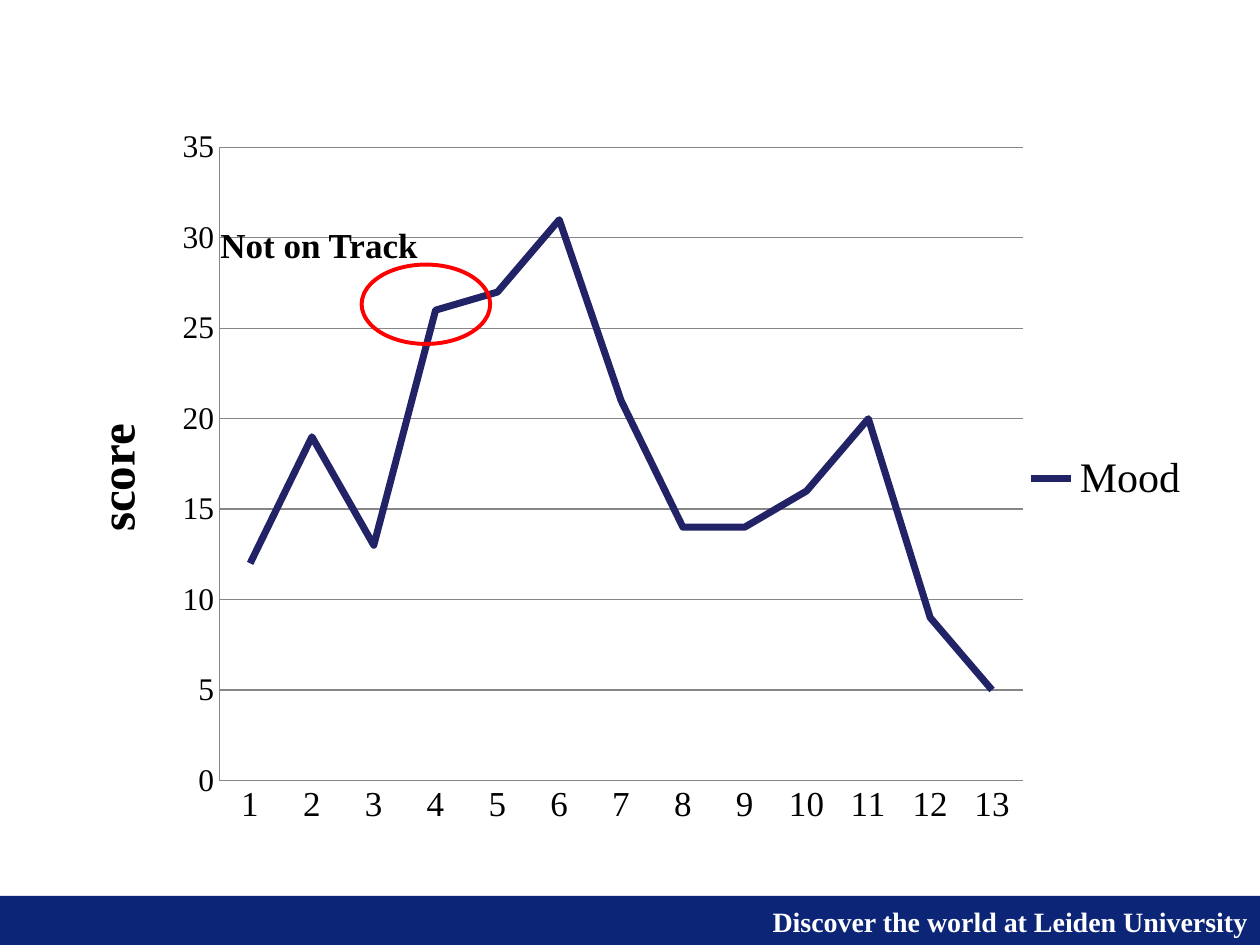
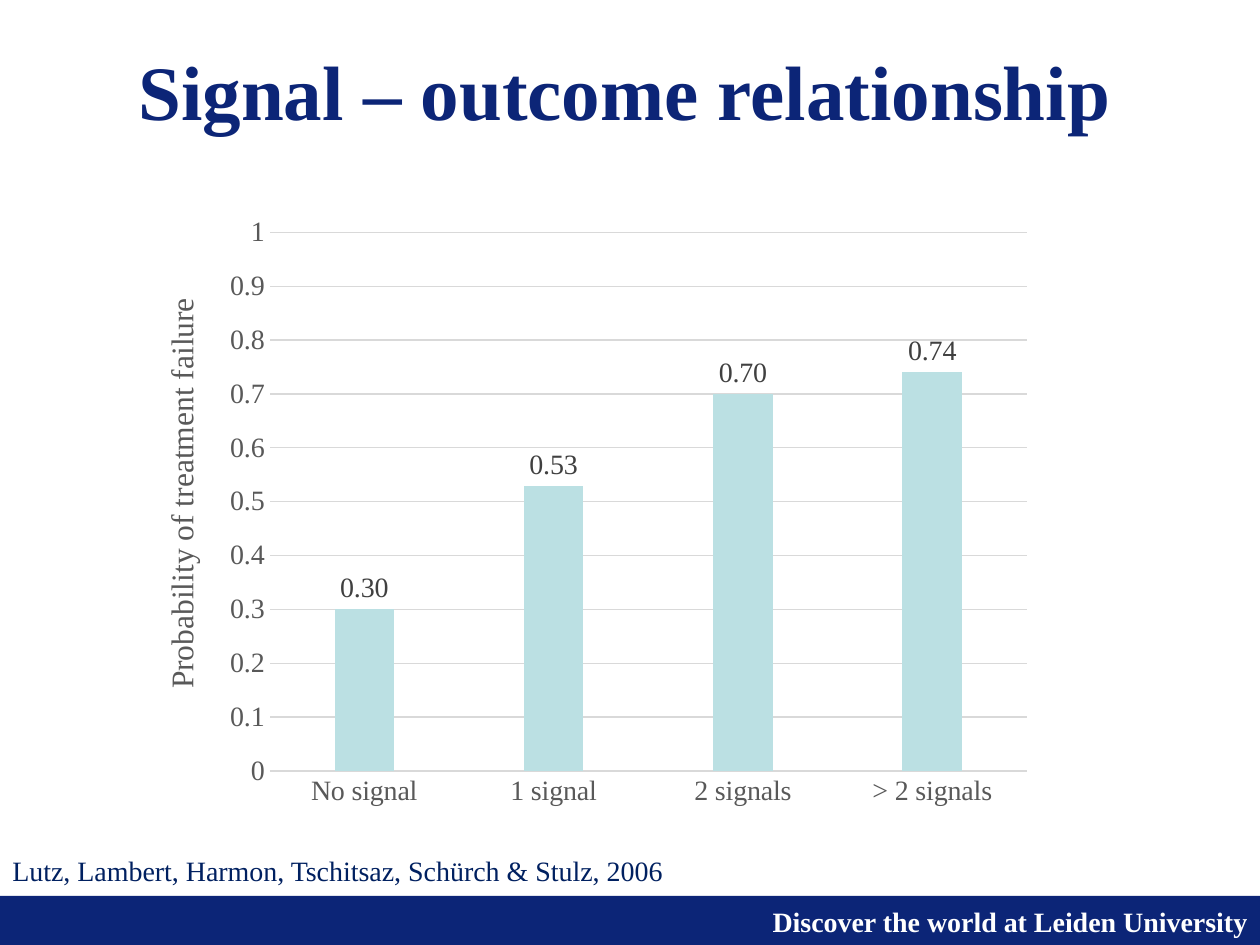
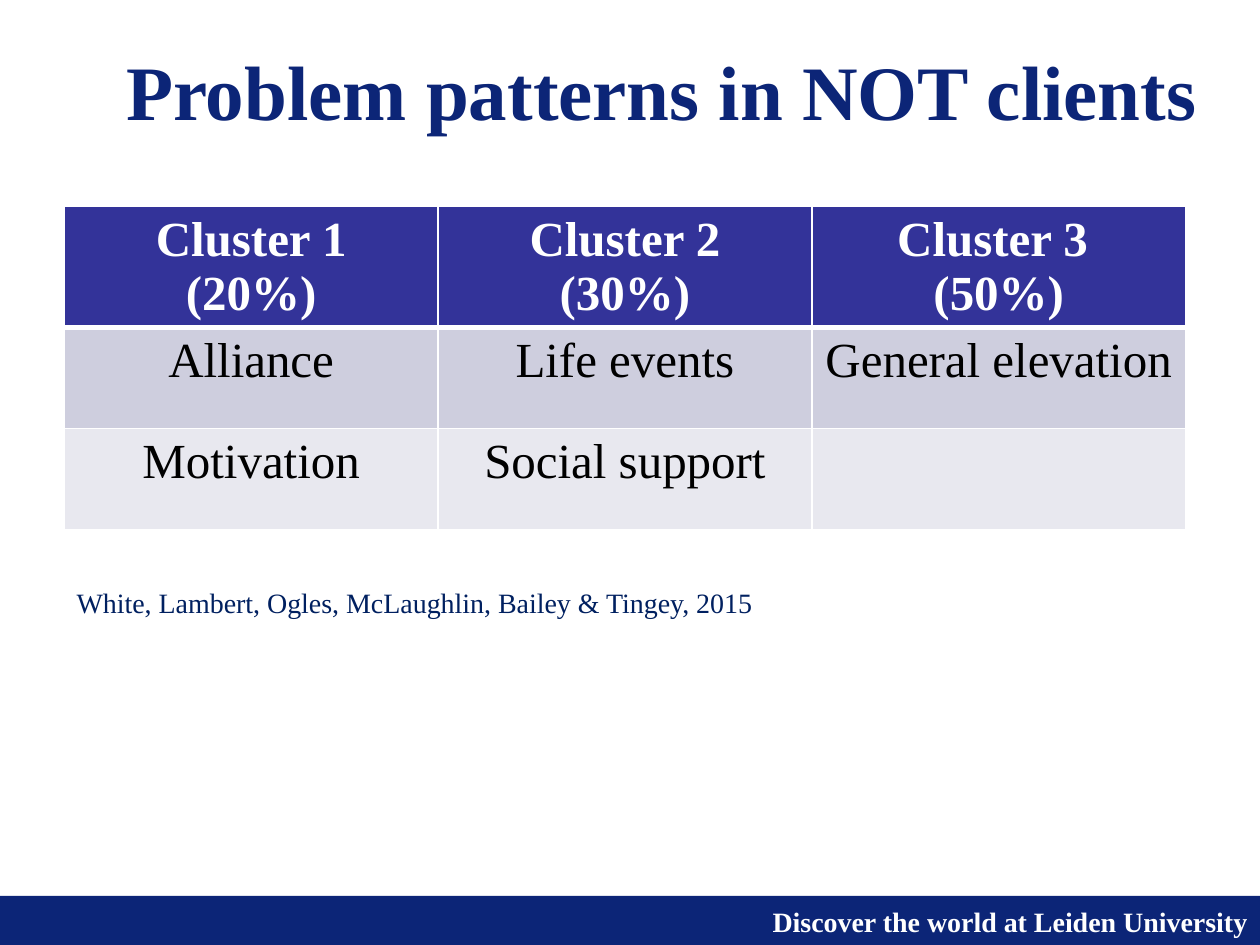
from dataclasses import dataclass

import pptx
import pptx.chart.data
import pptx.dml.color
import pptx.enum.chart
import pptx.enum.shapes
import pptx.enum.text
import pptx.oxml
import pptx.oxml.ns
import pptx.util

CELL = 0.5
COLS, ROWS = 20, 15
ALIGN = pptx.enum.text.PP_ALIGN
ANCHOR = pptx.enum.text.MSO_ANCHOR
CHART = pptx.enum.chart
SHAPE = pptx.enum.shapes.MSO_SHAPE


@dataclass(frozen=True)
class Theme:
    """Colours, font and type sizes of the deck."""
    font: str = "Times New Roman"
    navy: str = "0C2577"
    cite: str = "002060"
    white: str = "FFFFFF"
    black: str = "000000"
    red: str = "FF0000"
    line: str = "222267"
    bar: str = "BBE0E3"
    axis: str = "868686"
    grid: str = "D9D9D9"
    grey: str = "595959"
    label: str = "404040"
    rows: tuple = ("333399", "CECEDE", "E8E8EF")
    title: int = 44
    table: int = 28
    legend: int = 24
    note: int = 20
    tick: int = 18
    small: int = 16
    chart: int = 10


@dataclass(frozen=True)
class Box:
    """Region measured in grid columns and rows."""
    col: float
    row: float
    width: float
    height: float

    def inner(self, col, row, width, height):
        """Return a box offset from this one."""
        return Box(self.col + col, self.row + row, width, height)

    def emu(self):
        """Return left, top, width and height as lengths."""
        sides = (self.col, self.row, self.width, self.height)
        return [pptx.util.Inches(side * CELL) for side in sides]


T = Theme()
PAGE = Box(0, 0, COLS, ROWS)


def rgb(value):
    """Return a colour from its hex digits."""
    return pptx.dml.color.RGBColor.from_string(value)


def assign(obj, **values):
    """Set attributes of an object from format values."""
    for name, value in values.items():
        setattr(obj, name, value)


def set_font(font, size, color=T.black, bold=False):
    """Format a font in the deck typeface."""
    assign(font, name=T.font, size=pptx.util.Pt(size), bold=bold)
    font.color.rgb = rgb(color)


def set_line(line, color, width=0.75):
    """Format a line with a solid colour."""
    line.color.rgb = rgb(color)
    line.width = pptx.util.Pt(width)


def set_fill(fill, color):
    """Fill with a solid colour."""
    fill.solid()
    fill.fore_color.rgb = rgb(color)


def write(tf, lines, size, color, bold=False, align=ALIGN.LEFT, spacing=0.95):
    """Write lines as paragraphs of one style."""
    for i, line in enumerate(lines):
        p = tf.add_paragraph() if i else tf.paragraphs[0]
        assign(p, alignment=align, line_spacing=spacing)
        r = p.add_run()
        r.text = line
        set_font(r.font, size, color, bold)


def add_text(slide, box, text, size, color, **style):
    """Add a wrapping text box."""
    s = slide.shapes.add_textbox(*box.emu())
    s.text_frame.word_wrap = True
    write(s.text_frame, [text], size, color, **style)
    return s


def add_shape(slide, kind, box):
    """Add a preset shape without a shadow."""
    s = slide.shapes.add_shape(kind, *box.emu())
    s.shadow.inherit = False
    return s


def add_title(slide, box, text):
    """Place and format the title placeholder."""
    s = slide.shapes.title
    sides = zip(("left", "top", "width", "height"), box.emu())
    assign(s, **dict(sides))
    assign(s.text_frame, word_wrap=True, vertical_anchor=ANCHOR.MIDDLE,
           auto_size=pptx.enum.text.MSO_AUTO_SIZE.NONE)
    write(s.text_frame, [text], T.title, T.navy, bold=True,
          align=ALIGN.CENTER, spacing=1.0)


def add_footer(prs, slide, box):
    """Build the footer band and move it to the master."""
    band = add_shape(slide, SHAPE.RECTANGLE, box)
    set_fill(band.fill, T.navy)
    band.line.fill.background()
    motto = add_text(slide, box.inner(6.62, 0.04, 13.38, 0.74),
                     "Discover the world at Leiden University", T.small,
                     T.white, bold=True, align=ALIGN.RIGHT, spacing=1.0)
    for number, s in enumerate((band, motto), 100):
        s.element.nvSpPr.cNvPr.set("id", str(number))
        prs.slide_master.shapes.element.append(s.element)


def set_layout(parent, index, head="", **shares):
    """Fix the place of a chart part as shares of the chart."""
    for old in parent.findall(pptx.oxml.ns.qn("c:layout")):
        parent.remove(old)
    modes = '<c:xMode val="edge"/><c:yMode val="edge"/>'
    sizes = "".join(f'<c:{key} val="{val}"/>' for key, val in shares.items())
    parent.insert(index, pptx.oxml.parse_xml(
        f'<c:layout {pptx.oxml.ns.nsdecls("c")}><c:manualLayout>'
        f"{head}{modes}{sizes}</c:manualLayout></c:layout>"))


def place_plot(chart, box, col, row, width, height):
    """Place the inner plot area by cells within the chart box."""
    area = chart.element.find(".//" + pptx.oxml.ns.qn("c:plotArea"))
    set_layout(area, 0, '<c:layoutTarget val="inner"/>',
               x=col / box.width, y=row / box.height,
               w=width / box.width, h=height / box.height)


def place_axis_title(chart, box, col, row):
    """Place the value title by cells within the chart box."""
    set_layout(chart.value_axis.axis_title.element, 1,
               x=col / box.width, y=row / box.height)


def add_chart(slide, box, kind, cats, name, vals, fmt="General"):
    """Add a chart of one series in the deck font."""
    data = pptx.chart.data.CategoryChartData(number_format=fmt)
    data.categories = cats
    data.add_series(name, vals)
    chart = slide.shapes.add_chart(kind, *box.emu(), data).chart
    assign(chart, has_title=False, has_legend=False)
    set_font(chart.font, T.chart)
    chart.plots[0].vary_by_categories = False
    return chart


def format_axes(chart, cat_size, val_size, color, line, title, title_size,
                bold, top, step):
    """Format both axes, the gridlines and the value title."""
    cat, val = chart.category_axis, chart.value_axis
    for axis, size in ((cat, cat_size), (val, val_size)):
        assign(axis, major_tick_mark=CHART.XL_TICK_MARK.NONE,
               minor_tick_mark=CHART.XL_TICK_MARK.NONE)
        set_font(axis.tick_labels.font, size, color)
        set_line(axis.format.line, line)
    assign(val, minimum_scale=0, maximum_scale=top, major_unit=step,
           has_major_gridlines=True)
    assign(val.tick_labels, number_format="General",
           number_format_is_linked=False)
    set_line(val.major_gridlines.format.line, line)
    write(val.axis_title.text_frame, [title], title_size, color, bold=bold,
          align=ALIGN.CENTER, spacing=None)


def score_chart(slide, box):
    """Draw the score line with its marked session."""
    vals = (12, 19, 13, 26, 27, 31, 21, 14, 14, 16, 20, 9, 5)
    cats = [str(i + 1) for i in range(len(vals))]
    chart = add_chart(slide, box, CHART.XL_CHART_TYPE.LINE, cats, "Mood", vals)
    format_axes(chart, T.note, T.tick, T.black, T.axis, "score", T.table,
                True, 35, 5)
    place_plot(chart, box, 2.62, 0.5, 12.76, 10.05)
    series = chart.plots[0].series[0]
    series.smooth = False
    series.marker.style = CHART.XL_MARKER_STYLE.NONE
    set_line(series.format.line, T.line, 4)
    chart.has_legend = True
    assign(chart.legend, position=CHART.XL_LEGEND_POSITION.RIGHT,
           include_in_layout=False)
    set_font(chart.legend.font, T.legend)
    ring = add_shape(slide, SHAPE.OVAL, box.inner(4.88, 2.36, 2.04, 1.26))
    ring.fill.background()
    set_line(ring.line, T.red, 2.25)
    add_text(slide, box.inner(2.44, 1.66, 4.1, 0.84), "Not on Track",
             T.note, T.black, bold=True)


def failure_chart(slide, box):
    """Draw the failure columns with their values."""
    chart = add_chart(slide, box, CHART.XL_CHART_TYPE.COLUMN_CLUSTERED,
                      ("No signal", "1 signal", "2 signals", "> 2 signals"),
                      "Series 1", (0.3, 0.53, 0.7, 0.74), "0.00")
    format_axes(chart, T.small, T.small, T.grey, T.grid,
                "Probability of treatment failure", T.tick, False, 1, 0.1)
    chart.value_axis.format.line.fill.background()
    place_plot(chart, box, 2, 0.45, 12.02, 8.55)
    place_axis_title(chart, box, 0.2, 1.4)
    plot = chart.plots[0]
    assign(plot, gap_width=219, overlap=-27, has_data_labels=True)
    set_fill(plot.series[0].format.fill, T.bar)
    assign(plot.data_labels, show_value=True, number_format="0.00",
           number_format_is_linked=False,
           position=CHART.XL_LABEL_POSITION.OUTSIDE_END)
    set_font(plot.data_labels.font, T.small, T.label)


def set_borders(cell, bottom):
    """Give a cell white borders."""
    props = cell._tc.get_or_add_tcPr()
    widths = {"L": 1, "R": 1, "T": 1, "B": bottom}
    for i, (side, width) in enumerate(widths.items()):
        props.insert(i, pptx.oxml.parse_xml(
            f'<a:ln{side} {pptx.oxml.ns.nsdecls("a")} w="{pptx.util.Pt(width)}">'
            f'<a:solidFill><a:srgbClr val="{T.white}"/></a:solidFill></a:ln{side}>'))


def cluster_table(slide, box):
    """Draw the table of problem clusters."""
    rows = (
        (("Cluster 1", "(20%)"), ("Cluster 2", "(30%)"), ("Cluster 3 ", "(50%)")),
        (("Alliance",), ("Life events",), ("General elevation",)),
        (("Motivation",), ("Social support",), ()),
    )
    table = slide.shapes.add_table(len(rows), len(rows[0]), *box.emu()).table
    for i, row in enumerate(rows):
        head = i == 0
        table.rows[i].height = pptx.util.Inches(0.95 if head else 0.8)
        for j, lines in enumerate(row):
            cell = table.cell(i, j)
            set_fill(cell.fill, T.rows[i])
            set_borders(cell, 3 if head else 1)
            write(cell.text_frame, lines, T.table,
                  T.white if head else T.black, head, ALIGN.CENTER, 1.0)


def add_citation(slide, box, text):
    """Add a literature reference."""
    add_text(slide, box, text, T.small, T.cite)


def score_slide(slide, page):
    """Build the slide of session scores."""
    score_chart(slide, page.inner(0.86, 1.84, 18.26, 11.5))


def failure_slide(slide, page):
    """Build the slide of signals and outcome."""
    add_title(slide, page.inner(1.02, 0.74, 17.8, 1.38),
              "Signal – outcome relationship")
    failure_chart(slide, page.inner(2.28, 3.24, 14.3, 9.78))
    add_citation(slide, page.inner(0, 13.49, 14.34, 0.72),
                 "Lutz, Lambert, Harmon, Tschitsaz, Schürch & Stulz, 2006")


def cluster_slide(slide, page):
    """Build the slide of problem patterns."""
    add_title(slide, page.inner(1.02, 0.74, 18.98, 1.38),
              "Problem patterns in NOT clients")
    cluster_table(slide, page.inner(1.02, 3.28, 17.8, 5.1))
    add_citation(slide, page.inner(1.02, 9.24, 14.34, 0.74),
                 "White, Lambert, Ogles, McLaughlin, Bailey & Tingey, 2015")


def main():
    """Build and save the deck."""
    prs = pptx.Presentation()
    prs.slide_width, prs.slide_height = PAGE.emu()[2:]
    title_only, blank = prs.slide_layouts[5], prs.slide_layouts[6]
    builders = ((blank, score_slide), (title_only, failure_slide),
                (title_only, cluster_slide))
    for layout, build in builders:
        build(prs.slides.add_slide(layout), PAGE)
    add_footer(prs, prs.slides[0], PAGE.inner(0, 14.22, COLS, 0.78))
    prs.save("out.pptx")


if __name__ == "__main__":
    main()
